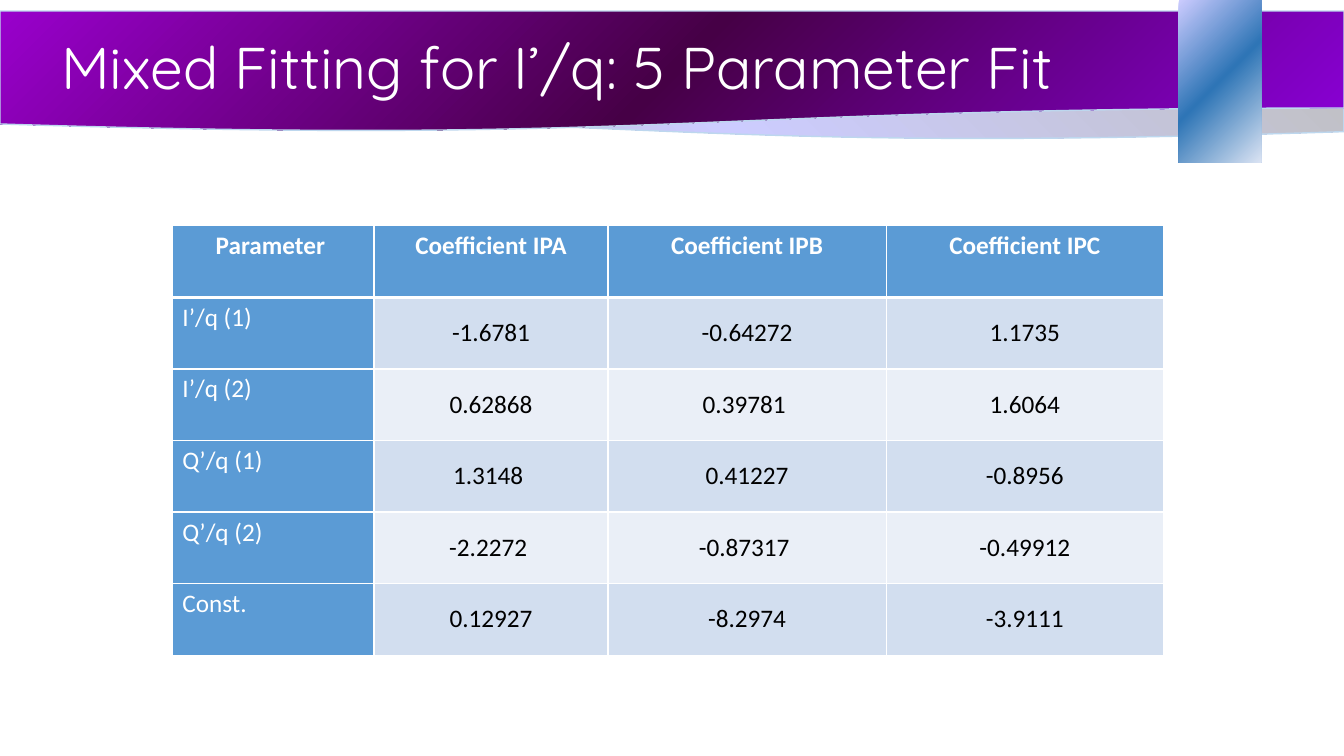
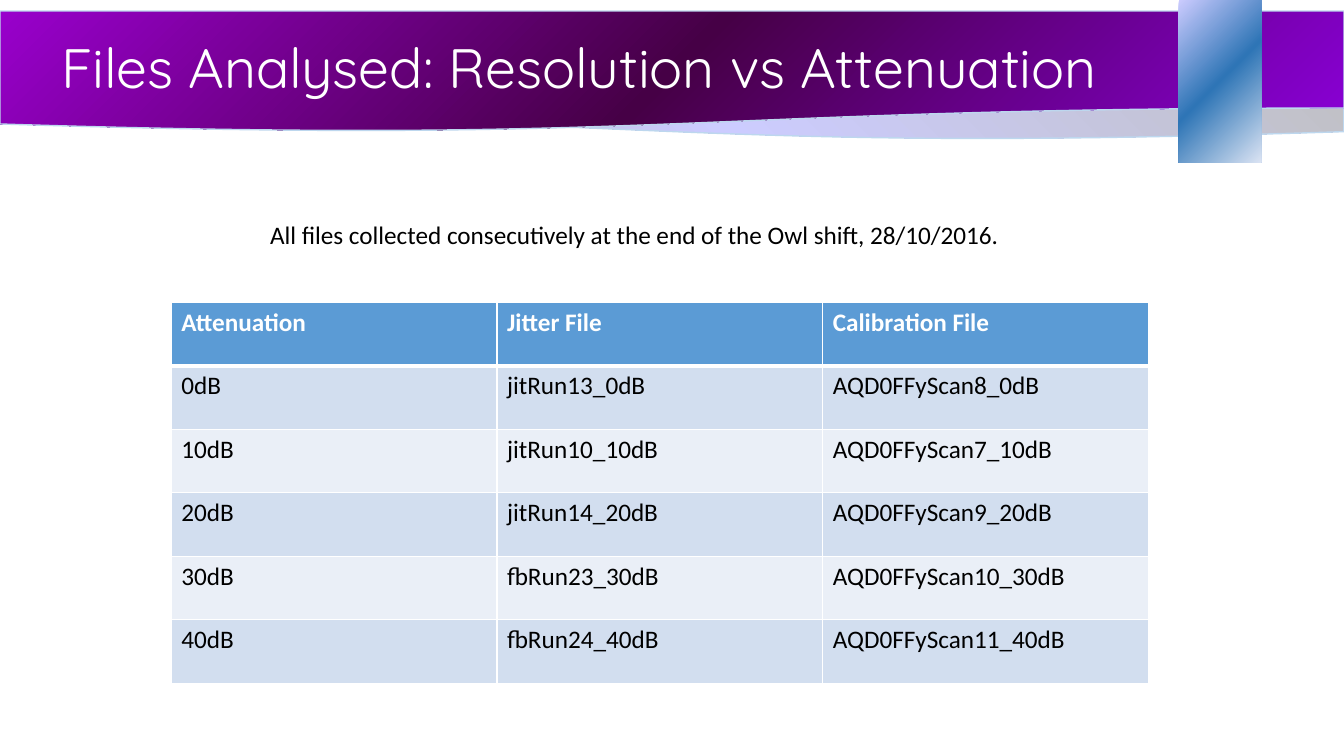
from lxml import etree
from pptx import Presentation
from pptx import util as u
from pptx.dml.color import RGBColor
from pptx.enum import shapes, text
from pptx.oxml.ns import qn

COLORS = {
    "white": "FFFFFF", "black": "000000", "outline": "BDD7EE",
    "header": "5B9BD5", "odd_row": "D2DEEF", "even_row": "EAEFF7",
}
SILVER = ["A6A6A6", "CCCCFF", "BFBFBF"]
PURPLE = ["8A00D6", "460046", "9900CC"]
RIBBON = ["DAE3F3", "2E75B6", "CCCCFF"]
TITLE_FONT, BODY_FONT = "Quicksand", "Calibri"


def rgb(name):
    return RGBColor.from_string(COLORS[name])


def child(parent, tag, **attributes):
    return etree.SubElement(parent, qn(tag), attributes)


def write(paragraph, words, size, font, color, bold=False):
    run = paragraph.add_run()
    run.text = words
    run.font.size = u.Pt(size)
    run.font.name = font
    run.font.bold = bold
    run.font.color.rgb = rgb(color)


def add_gradient_shape(slide, kind, box, stops, corner=False, outlined=True):
    shape = slide.shapes.add_shape(kind, *map(u.Inches, box))
    shape.shadow.inherit = False
    shape.fill.gradient()
    gradient = shape._element.spPr.find(qn("a:gradFill"))
    gradient.clear()
    gradient.set("rotWithShape", "1")
    stop_list = child(gradient, "a:gsLst")
    for index, color in enumerate(stops):
        stop = child(stop_list, "a:gs", pos=str(index * 50000))
        child(stop, "a:srgbClr", val=color)
    if corner:
        route = child(gradient, "a:path", path="circle")
        child(route, "a:fillToRect", l="100000", t="100000")
        child(gradient, "a:tileRect", r="-100000", b="-100000")
    else:
        child(gradient, "a:lin", ang=str(225 * 60000), scaled="0")
    if outlined:
        shape.line.color.rgb = rgb("outline")
        shape.line.width = u.Pt(1)
    else:
        shape.line.fill.background()
    return shape


def add_text(slide, box, words, size, font, color, anchor, spacing=None):
    frame = slide.shapes.add_textbox(*map(u.Inches, box)).text_frame
    frame.word_wrap = True
    frame.vertical_anchor = anchor
    paragraph = frame.paragraphs[0]
    if spacing:
        paragraph.line_spacing = spacing
    write(paragraph, words, size, font, color)


def add_header(slide, title, size):
    wave = shapes.MSO_SHAPE.FLOWCHART_DOCUMENT
    back_wave = add_gradient_shape(slide, wave, (0, 0.13, 13.33, 1.26), SILVER)
    back_wave._element.spPr.find(qn("a:xfrm")).set("flipH", "1")
    add_gradient_shape(slide, wave, (0, 0.11, 13.33, 1.2), PURPLE)
    add_gradient_shape(slide, shapes.MSO_SHAPE.RECTANGLE, (11.69, 0, 0.82, 1.61),
                       RIBBON, corner=True, outlined=False)
    add_text(slide, (0.51, 0.12, 11.5, 1.16), title, size, TITLE_FONT, "white",
             text.MSO_ANCHOR.MIDDLE, 0.9)


def add_borders(cell, row):
    widths = {"L": 1, "R": 1, "T": 3 if row == 1 else 1, "B": 3 if row == 0 else 1}
    properties = cell._tc.get_or_add_tcPr()
    for side, width in widths.items():
        border = child(properties, f"a:ln{side}", w=str(u.Pt(width)))
        child(child(border, "a:solidFill"), "a:srgbClr", val=COLORS["white"])


def add_grid(slide, left, top, widths, row_height, rows, numeric=False):
    frame = slide.shapes.add_table(
        len(rows), len(widths), u.Inches(left), u.Inches(top),
        u.Inches(sum(widths)), u.Inches(row_height * len(rows)))
    table = frame.table
    table.first_col = numeric
    for column, width in zip(table.columns, widths):
        column.width = u.Inches(width)
    for r, values in enumerate(rows):
        table.rows[r].height = u.Inches(row_height)
        for c, value in enumerate(values):
            cell = table.cell(r, c)
            label = r == 0 or (numeric and c == 0)
            add_borders(cell, r)
            cell.fill.solid()
            band = "odd_row" if r % 2 else "even_row"
            cell.fill.fore_color.rgb = rgb("header" if label else band)
            paragraph = cell.text_frame.paragraphs[0]
            if numeric and (r == 0 or c > 0):
                paragraph.alignment = text.PP_ALIGN.CENTER
            if numeric and not label:
                cell.vertical_anchor = text.MSO_ANCHOR.MIDDLE
            write(paragraph, value, 18, BODY_FONT,
                  "white" if label else "black", bold=r == 0)


def build_fit_slide(slide):
    add_header(slide, "Mixed Fitting for I’/q: 5 Parameter Fit", 42)
    coefficients = [
        ("Parameter ", "Coefficient IPA", "Coefficient IPB", "Coefficient IPC"),
        ("I’/q (1)", "-1.6781", "-0.64272", "1.1735"),
        ("I’/q (2)", "0.62868", "0.39781 ", "1.6064"),
        ("Q’/q (1)", "1.3148 ", "0.41227", "-0.8956"),
        ("Q’/q (2)", "-2.2272 ", "-0.87317 ", "-0.49912"),
        ("Const.", "0.12927", "-8.2974", "-3.9111"),
    ]
    add_grid(slide, 1.71, 2.24, (2, 2.32, 2.76, 2.75), 0.71, coefficients, numeric=True)


def build_files_slide(slide):
    add_header(slide, "Files Analysed: Resolution vs Attenuation", 39.6)
    files = [
        ("Attenuation", "Jitter File", "Calibration File"),
        ("0dB", "jitRun13_0dB", "AQD0FFyScan8_0dB"),
        ("10dB", "jitRun10_10dB", "AQD0FFyScan7_10dB"),
        ("20dB", "jitRun14_20dB", "AQD0FFyScan9_20dB"),
        ("30dB", "fbRun23_30dB", "AQD0FFyScan10_30dB"),
        ("40dB", "fbRun24_40dB", "AQD0FFyScan11_40dB"),
    ]
    add_grid(slide, 1.7, 3, (3.23,) * 3, 0.63, files)
    add_text(slide, (2.58, 2.13, 9.03, 0.4),
             "All files collected consecutively at the end of the Owl shift, 28/10/2016.",
             18, BODY_FONT, "black", text.MSO_ANCHOR.TOP)


def main():
    deck = Presentation()
    deck.slide_width, deck.slide_height = u.Inches(13.33), u.Inches(7.5)
    for build in (build_fit_slide, build_files_slide):
        build(deck.slides.add_slide(deck.slide_layouts[6]))
    deck.save("out.pptx")


if __name__ == "__main__":
    main()
